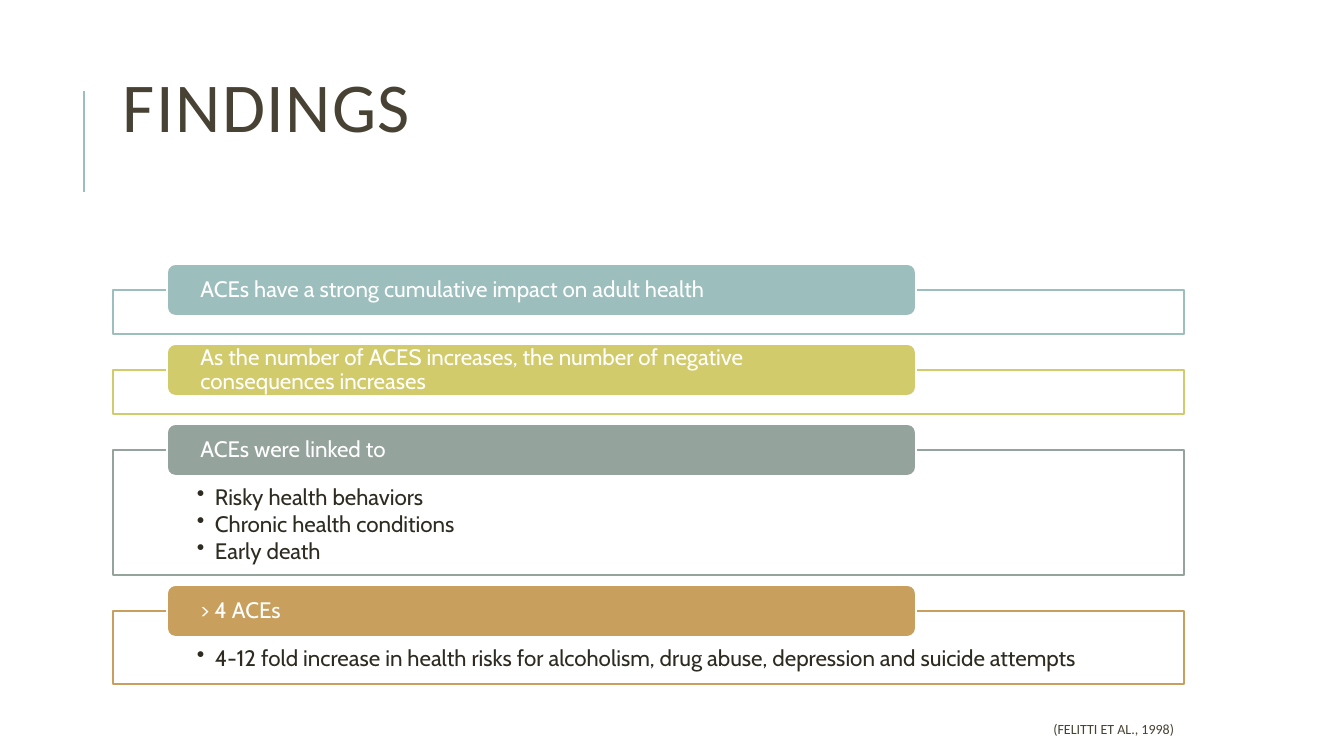
"""Build the Findings slide: four labelled panels under a title."""
from lxml import etree
from pptx import Presentation
from pptx.dml.color import RGBColor
from pptx.enum.shapes import MSO_CONNECTOR, MSO_SHAPE
from pptx.enum.text import MSO_ANCHOR, MSO_AUTO_SIZE, PP_ALIGN
from pptx.oxml.ns import qn
from pptx.util import Pt

STRAIGHT = MSO_CONNECTOR.STRAIGHT
RECTANGLE, ROUNDED = MSO_SHAPE.RECTANGLE, MSO_SHAPE.ROUNDED_RECTANGLE
TOP, MIDDLE = MSO_ANCHOR.TOP, MSO_ANCHOR.MIDDLE
LEFT, RIGHT = PP_ALIGN.LEFT, PP_ALIGN.RIGHT
NO_FIT = MSO_AUTO_SIZE.NONE

THEME = {
    "teal": "9CBEBD", "olive": "D2CB6C", "sage": "95A39D", "ochre": "C89F5D",
    "white": "FFFFFF", "heading": "474233", "body": "2E2B21",
    "heading_font": "Calibri", "body_font": "Cabin",
    "title_size": 50, "text_size": 16, "citation_size": 10, "outline": 1.25,
}
PANELS = [
    ("ACEs have a strong cumulative impact on adult health", "teal", 44, []),
    ("As the number of ACES increases, the number of negative consequences increases",
     "olive", 44, []),
    ("ACEs were linked to", "sage", 125,
     ["Risky health behaviors", "Chronic health conditions", "Early death"]),
    ("> 4 ACEs", "ochre", 73,
     ["4-12 fold increase in health risks for alcoholism, drug abuse, "
      "depression and suicide attempts"]),
]
EDGE, PANEL_WIDTH, PANEL_GAP = 113, 1071, 36
TAB_LEFT, TAB_WIDTH, TAB_HEIGHT = 167, 749, 52


def px(length):
    """Turn pixels into EMU."""
    return round(length * 914400 / 100.8)


def write(shape, lines, font_name, size, color, margins, anchor=MIDDLE,
          align=LEFT, spacing=1.0, bulleted=False):
    """Fill a shape with evenly formatted paragraphs."""
    frame = shape.text_frame
    frame.word_wrap, frame.auto_size, frame.vertical_anchor = True, NO_FIT, anchor
    (frame.margin_left, frame.margin_top,
     frame.margin_right, frame.margin_bottom) = map(px, margins)
    frame.text = "\n".join(lines)
    for paragraph in frame.paragraphs:
        paragraph.alignment, paragraph.line_spacing = align, spacing
        if bulleted:
            paragraph.space_after = Pt(2)
            properties = paragraph._p.get_or_add_pPr()
            properties.set("marL", str(px(18)))
            properties.set("indent", str(px(-18)))
            etree.SubElement(properties, qn("a:buChar"), char="•")
        font = paragraph.font
        font.name, font.size = font_name, Pt(size)
        font.color.rgb = RGBColor.from_string(THEME[color])


presentation = Presentation()
presentation.slide_width, presentation.slide_height = px(1344), px(756)
slide = presentation.slides.add_slide(presentation.slide_layouts[5])
shapes = slide.shapes

accent = shapes.add_connector(STRAIGHT, px(84), px(192), px(84), px(91))
accent.line.color.rgb = RGBColor.from_string(THEME["teal"])
accent.line.width = Pt(1.5)
etree.SubElement(accent._element.spPr, qn("a:effectLst"))

title = shapes.title
title.left, title.top, title.width, title.height = map(px, (EDGE, 64, PANEL_WIDTH, 166))
write(title, ["FINDINGS"], THEME["heading_font"], THEME["title_size"], "heading",
      (10, 15, 10, 5), anchor=TOP, spacing=0.8)
title.text_frame.paragraphs[0].runs[0].font._element.set("spc", "100")

panel_top = 290
for heading, color, height, points in PANELS:
    panel = shapes.add_shape(RECTANGLE, *map(px, (EDGE, panel_top, PANEL_WIDTH, height)))
    tab = shapes.add_shape(ROUNDED, *map(px, (
        TAB_LEFT, panel_top - TAB_HEIGHT / 2, TAB_WIDTH, TAB_HEIGHT)))
    for shape, fill, line in ((panel, "white", color), (tab, color, "white")):
        shape.shadow.inherit = False
        shape.fill.solid()
        shape.fill.fore_color.rgb = RGBColor.from_string(THEME[fill])
        shape.line.color.rgb = RGBColor.from_string(THEME[line])
        shape.line.width = Pt(THEME["outline"])
    panel_color = panel._element.spPr.find(qn("a:solidFill"))[0]
    etree.SubElement(panel_color, qn("a:alpha"), val="90000")
    if points:
        write(panel, points, THEME["body_font"], THEME["text_size"], "body",
              (84, 36, 84, 12), anchor=TOP, spacing=0.9, bulleted=True)
    write(tab, [heading], THEME["body_font"], THEME["text_size"], "white",
          (31, 0, 31, 0), spacing=0.9)
    panel_top += height + PANEL_GAP

citation = shapes.add_textbox(*map(px, (534, 714, 650, 30)))
write(citation, ["(FELITTI ET AL., 1998)"], THEME["heading_font"],
      THEME["citation_size"], "heading", (10, 5, 10, 5), align=RIGHT)

presentation.save("out.pptx")
